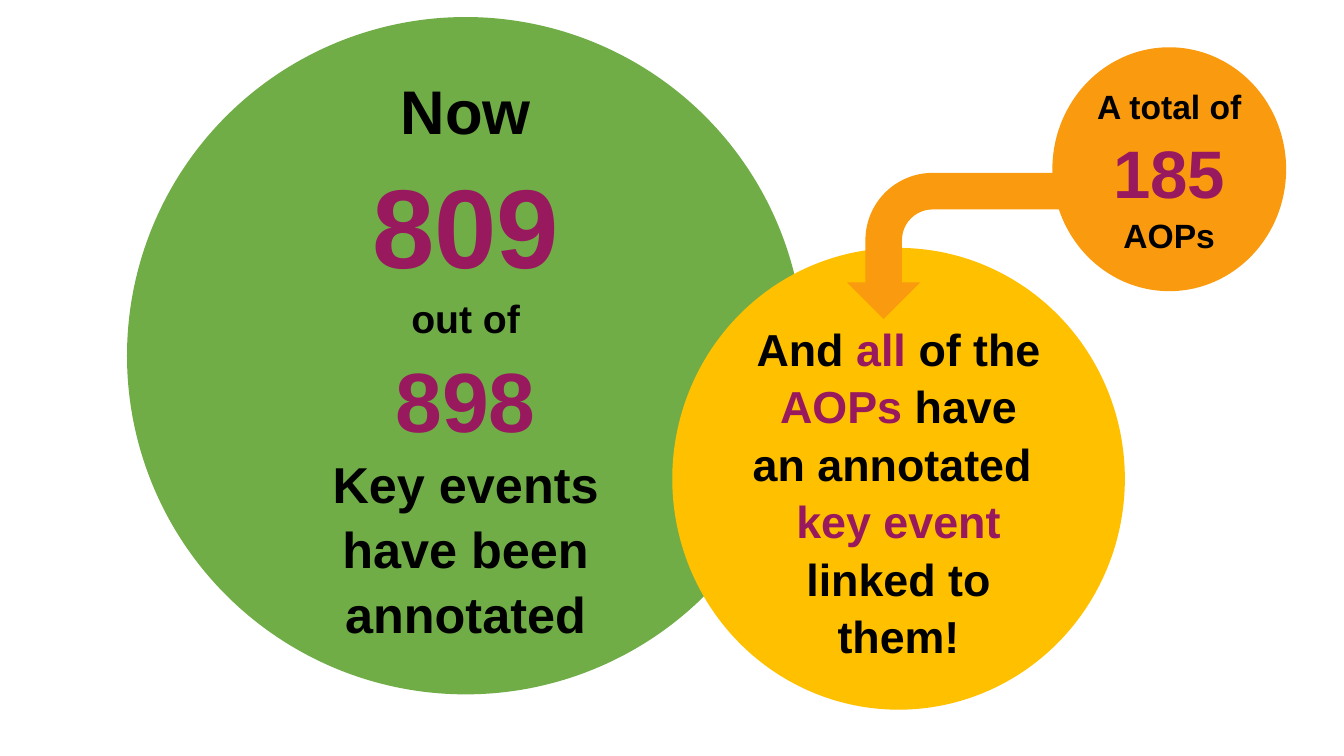
import pptx
import pptx.util
import pptx.dml.color
import pptx.enum.shapes
import pptx.enum.text
from dataclasses import dataclass

Pt = pptx.util.Pt
SHAPE = pptx.enum.shapes.MSO_SHAPE


@dataclass(frozen=True)
class Theme:
    font: str = "Arial"
    line_spacing: float = 1.07
    green: str = "70AD47"
    yellow: str = "FFC000"
    orange: str = "FA9A0E"
    text: str = "000000"
    accent: str = "99195E"
    label: int = 24
    small: int = 28
    message: int = 32
    body: int = 36
    heading: int = 44
    total: int = 48
    count: int = 60
    hero: int = 80


THEME = Theme()
SLIDE_SIZE = (960, 540)

# Each paragraph is a list of (text, size, colour) runs.
EVENTS = [
    [("Now", THEME.heading, THEME.text)],
    [("809", THEME.hero, THEME.accent)],
    [("out of", THEME.small, THEME.text)],
    [("898", THEME.count, THEME.accent)],
    [("Key events", THEME.body, THEME.text)],
    [("have been annotated", THEME.body, THEME.text)],
]
LINKED = [
    [("And ", THEME.message, THEME.text), ("all ", THEME.message, THEME.accent),
     ("of the", THEME.message, THEME.text)],
    [("AOPs ", THEME.message, THEME.accent), ("have", THEME.message, THEME.text)],
    [("an annotated ", THEME.message, THEME.text)],
    [("key event ", THEME.message, THEME.accent),
     ("linked to them!", THEME.message, THEME.text)],
]
TOTAL = [
    [("A total of", THEME.label, THEME.text)],
    [("185", THEME.total, THEME.accent)],
    [("AOPs", THEME.label, THEME.text)],
]

EVENTS_BOX = (90.7, 12.2, 483.8, 483.8)
LINKED_BOX = (480.2, 177.1, 323.3, 329.8)
ARROW_BOX = (637.9, 90.7, 104.4, 169.9)
TOTAL_BOX = (751.7, 33.8, 167, 174.2)
ARROW_ADJUSTMENTS = (0.25, 0.25, 0.25, 0.46)


def rgb(colour):
    return pptx.dml.color.RGBColor.from_string(colour)


def add_filled(slide, preset, box, colour):
    sp = slide.shapes.add_shape(preset, *map(Pt, box))
    sp.shadow.inherit = False
    sp.fill.solid()
    sp.fill.fore_color.rgb = rgb(colour)
    sp.line.fill.background()
    return sp


def write(sp, paragraphs, *, font=THEME.font, bold=True, top=3.6, bottom=3.6,
          line_spacing=THEME.line_spacing):
    tf = sp.text_frame
    tf.word_wrap = True
    tf.vertical_anchor = pptx.enum.text.MSO_ANCHOR.MIDDLE
    tf.margin_top, tf.margin_bottom = Pt(top), Pt(bottom)
    for i, runs in enumerate(paragraphs):
        p = tf.add_paragraph() if i else tf.paragraphs[0]
        p.alignment = pptx.enum.text.PP_ALIGN.CENTER
        p.line_spacing = line_spacing
        for text, size, colour in runs:
            r = p.add_run()
            r.text = text
            r.font.name, r.font.size, r.font.bold = font, Pt(size), bold
            r.font.color.rgb = rgb(colour)


def add_turning_arrow(slide, box, colour):
    """Add a bent arrow that enters from the right and points down."""
    sp = add_filled(slide, SHAPE.BENT_ARROW, box, colour)
    for i, value in enumerate(ARROW_ADJUSTMENTS):
        sp.adjustments[i] = value
    sp.rotation = 90
    sp.element.spPr.xfrm.set("flipV", "1")


def main():
    prs = pptx.Presentation()
    prs.slide_width, prs.slide_height = map(Pt, SLIDE_SIZE)
    slide = prs.slides.add_slide(prs.slide_layouts[6])

    write(add_filled(slide, SHAPE.OVAL, EVENTS_BOX, THEME.green), EVENTS)
    write(add_filled(slide, SHAPE.OVAL, LINKED_BOX, THEME.yellow), LINKED,
          top=16, bottom=0)
    add_turning_arrow(slide, ARROW_BOX, THEME.orange)
    write(add_filled(slide, SHAPE.OVAL, TOTAL_BOX, THEME.orange), TOTAL)

    prs.save("out.pptx")


if __name__ == "__main__":
    main()
